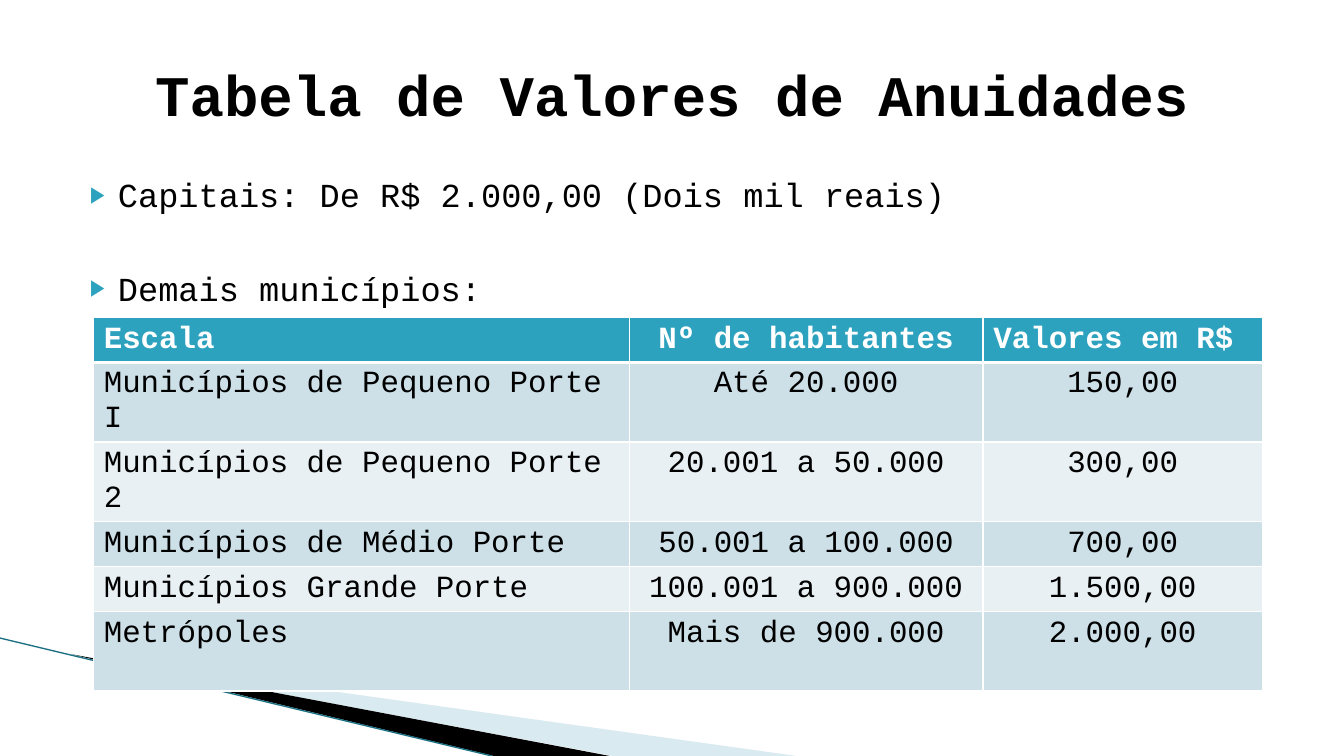
from dataclasses import dataclass

from lxml.etree import SubElement
from pptx import Presentation
from pptx.dml.color import RGBColor
from pptx.enum.shapes import MSO_CONNECTOR
from pptx.enum.text import MSO_ANCHOR, MSO_AUTO_SIZE, PP_ALIGN
from pptx.oxml.ns import qn
from pptx.util import Inches, Pt

FONT = "Courier New"
COLORS = {
    "text": "000000",
    "white": "FFFFFF",
    "accent": "2DA2BF",
    "band_dark": "CDE0E8",
    "band_light": "E8F0F4",
    "wedge": "A0CBDC",
    "edge": "1B7183",
}


@dataclass
class Wedge:
    points: list[tuple[float, float]]
    color: str
    opacity: int = 100


@dataclass
class Scale:
    name: str
    inhabitants: str
    value: str
    height: float


WEDGES = [
    Wedge([(0.73, 6.5), (7.9, 7.5), (6.08, 7.5)], "wedge", 40),
    Wedge([(0.71, 6.49), (6.05, 7.5), (4.9, 7.5)], "text"),
]
SCALES = [
    Scale("Escala", "Nº de habitantes", "Valores em R$ ", 0.44),
    Scale("Municípios de Pequeno Porte I", "Até 20.000", "150,00", 0.79),
    Scale("Municípios de Pequeno Porte 2", "20.001 a 50.000", "300,00", 0.79),
    Scale("Municípios de Médio Porte", "50.001 a 100.000", "700,00", 0.44),
    Scale("Municípios Grande Porte", "100.001 a 900.000", "1.500,00", 0.44),
    Scale("Metrópoles", "Mais de 900.000", "2.000,00", 0.79),
]
COLUMN_WIDTHS = [5.31, 3.51, 2.77]


def rgb(name: str) -> RGBColor:
    return RGBColor.from_string(COLORS[name])


def place(shape, left: float, top: float, width: float, height: float) -> None:
    shape.left, shape.top = Inches(left), Inches(top)
    shape.width, shape.height = Inches(width), Inches(height)


def add_text(paragraph, text: str, size: float, color: str = "text", bold: bool = False) -> None:
    run = paragraph.add_run()
    run.text = text
    run.font.name = FONT
    run.font.size = Pt(size)
    run.font.bold = bold
    run.font.color.rgb = rgb(color)


def add_bullet(paragraph) -> None:
    properties = paragraph._p.get_or_add_pPr()
    properties.set("marL", str(Inches(0.4)))
    properties.set("indent", str(Inches(-0.28)))
    bullet_color = SubElement(properties, qn("a:buClr"))
    SubElement(bullet_color, qn("a:srgbClr"), val=COLORS["accent"])
    SubElement(properties, qn("a:buSzPct"), val="68000")
    SubElement(properties, qn("a:buChar"), char="▶")


def draw_wedge(shapes, wedge: Wedge) -> None:
    start, *others = [(Inches(x), Inches(y)) for x, y in wedge.points]
    builder = shapes.build_freeform(*start)
    builder.add_line_segments(others)
    shape = builder.convert_to_shape()
    shape.shadow.inherit = False
    shape.line.fill.background()
    shape.fill.solid()
    shape.fill.fore_color.rgb = rgb(wedge.color)
    if wedge.opacity < 100:
        fill_color = shape._element.spPr.find(qn("a:solidFill"))[0]
        SubElement(fill_color, qn("a:alpha"), val=str(wedge.opacity * 1000))


def set_borders(cell, top: int, bottom: int) -> None:
    properties = cell._tc.get_or_add_tcPr()
    widths = {"a:lnL": 1, "a:lnR": 1, "a:lnT": top, "a:lnB": bottom}
    for position, (tag, width) in enumerate(widths.items()):
        line = SubElement(properties, qn(tag), w=str(Pt(width)))
        fill = SubElement(line, qn("a:solidFill"))
        SubElement(fill, qn("a:srgbClr"), val=COLORS["white"])
        properties.insert(position, line)


def draw_table(shapes, scales: list[Scale]) -> None:
    table = shapes.add_table(
        len(scales), len(COLUMN_WIDTHS), Inches(0.93), Inches(3.15),
        Inches(sum(COLUMN_WIDTHS)), Inches(sum(scale.height for scale in scales)),
    ).table
    for column, width in zip(table.columns, COLUMN_WIDTHS):
        column.width = Inches(width)
    for row, scale in enumerate(scales):
        table.rows[row].height = Inches(scale.height)
        header = row == 0
        band = "accent" if header else "band_dark" if row % 2 else "band_light"
        for column, text in enumerate((scale.name, scale.inhabitants, scale.value)):
            cell = table.cell(row, column)
            cell.fill.solid()
            cell.fill.fore_color.rgb = rgb(band)
            set_borders(cell, top=3 if row == 1 else 1, bottom=3 if header else 1)
            paragraph = cell.text_frame.paragraphs[0]
            paragraph.alignment = PP_ALIGN.CENTER if column else PP_ALIGN.LEFT
            add_text(paragraph, text, 22, "white" if header else "text", header)


def main() -> None:
    presentation = Presentation()
    presentation.slide_width = Inches(13.33)
    presentation.slide_height = Inches(7.5)
    slide = presentation.slides.add_slide(presentation.slide_layouts[1])
    shapes = slide.shapes

    # Corner decoration
    for wedge in WEDGES:
        draw_wedge(shapes, wedge)
    edge = shapes.add_connector(
        MSO_CONNECTOR.STRAIGHT, Inches(0), Inches(6.33), Inches(4.88), Inches(7.5)
    )
    edge.line.color.rgb = rgb("edge")
    edge.line.width = Pt(0.95)
    SubElement(edge._element.spPr, qn("a:effectLst"))

    # Title
    title = shapes.title
    place(title, 0.67, 0.3, 12, 1.25)
    title.text_frame.auto_size = MSO_AUTO_SIZE.NONE
    title.text_frame.vertical_anchor = MSO_ANCHOR.MIDDLE
    heading = title.text_frame.paragraphs[0]
    heading.alignment = PP_ALIGN.CENTER
    add_text(heading, "Tabela de Valores de Anuidades", 41, bold=True)

    # Bulleted list
    municipalities = slide.placeholders[1]
    place(municipalities, 0.67, 1.68, 12, 4.89)
    frame = municipalities.text_frame
    frame.auto_size = MSO_AUTO_SIZE.NONE
    frame.vertical_anchor = MSO_ANCHOR.TOP
    capitals, others = frame.paragraphs[0], frame.add_paragraph()
    for paragraph, text, gap in (
        (capitals, "Capitais: De R$ 2.000,00 (Dois mil reais)", 0),
        (others, "Demais municípios:", 38),
    ):
        add_bullet(paragraph)
        paragraph.space_before = Pt(gap)
        add_text(paragraph, text, 24)

    # Annual fee table
    draw_table(shapes, SCALES)

    presentation.save("out.pptx")


if __name__ == "__main__":
    main()
